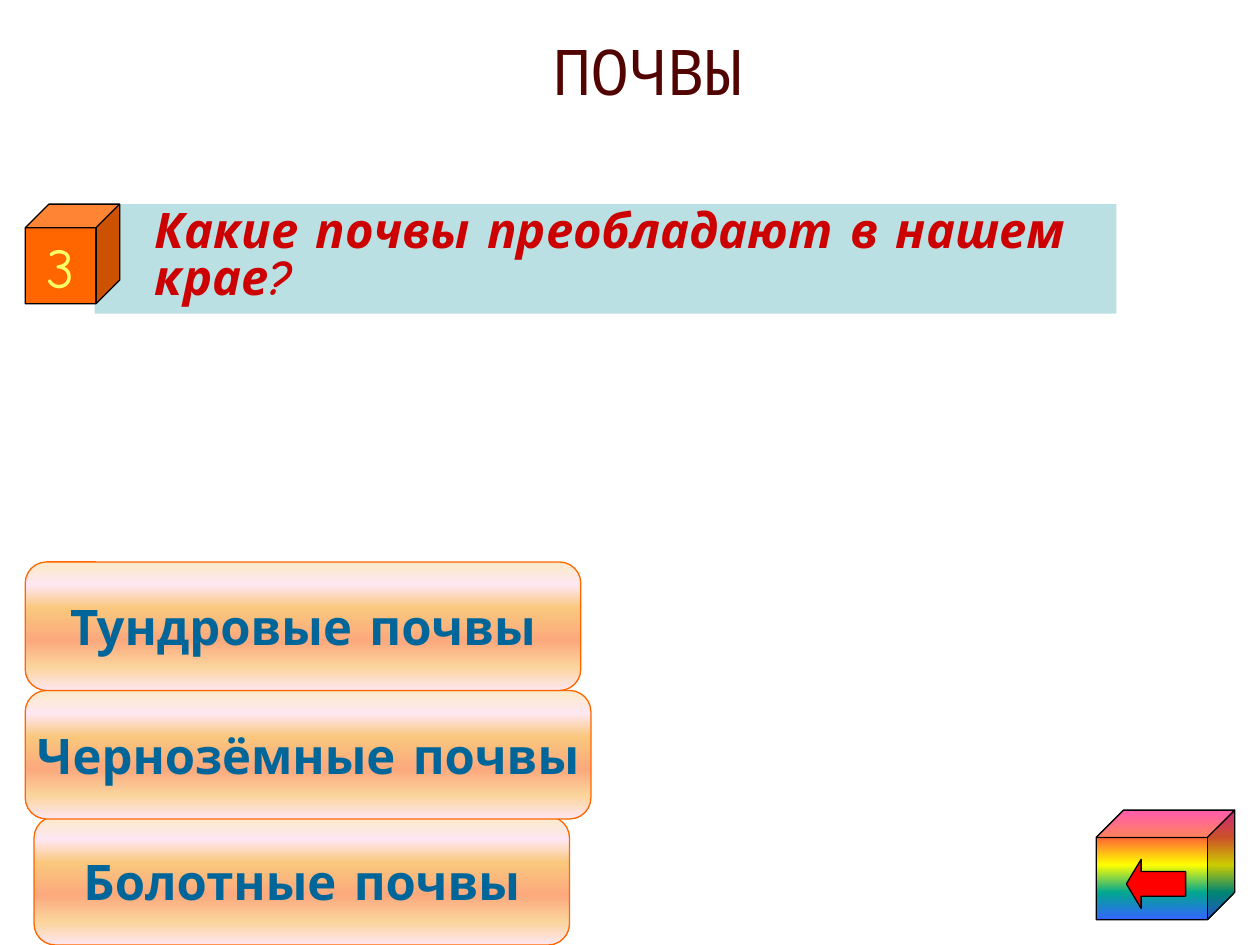
from dataclasses import dataclass
from typing import Any

from lxml import etree
from pptx import Presentation
from pptx.dml.color import RGBColor
from pptx.enum.shapes import MSO_SHAPE
from pptx.enum.text import MSO_ANCHOR, MSO_AUTO_SIZE, PP_ALIGN
from pptx.oxml.ns import qn
from pptx.util import Inches, Pt

ROUND, CUBE, ARROW = MSO_SHAPE.ROUNDED_RECTANGLE, MSO_SHAPE.CUBE, MSO_SHAPE.LEFT_ARROW
TOP, MIDDLE = MSO_ANCHOR.TOP, MSO_ANCHOR.MIDDLE
LEFT, CENTER = PP_ALIGN.LEFT, PP_ALIGN.CENTER
FIXED = MSO_AUTO_SIZE.NONE

WIDE, HIGH = Inches(10), Inches(7.5)
COLS, ROWS = 100, 75
HAND, MONO = "Comic Neue", "Noto Sans Mono"
PEACH = [(0, "FBEAC7"), (18, "FEE7F2"), (36, "FAC77D"),
         (61, "FBA97D"), (82, "FBD49C"), (100, "FEE7F2")]
RAINBOW = [(0, "FF3399"), (25, "FF6633"), (50, "FFFF00"),
           (75, "01A78F"), (100, "3366FF")]


@dataclass
class Box:
    col: float
    row: float
    cols: float
    rows: float

    def place(self) -> tuple[int, int, int, int]:
        return (int(WIDE * self.col / COLS), int(HIGH * self.row / ROWS),
                int(WIDE * self.cols / COLS), int(HIGH * self.rows / ROWS))


@dataclass
class Answer:
    text: str
    box: Box


ANSWERS = [
    Answer("Болотные почвы", Box(2.7, 64.8, 42.5, 10.2)),
    Answer("Чернозёмные почвы", Box(2, 54.8, 44.9, 10.2)),
    Answer("Тундровые почвы", Box(2, 44.6, 44.1, 10.2)),
]


def color(code: str) -> RGBColor:
    return RGBColor.from_string(code)


def blend(shape: Any, stops: list[tuple[int, str]]) -> None:
    shape.fill.gradient()
    shape.fill.gradient_angle = 270
    items = shape._element.spPr.find(qn("a:gradFill")).find(qn("a:gsLst"))
    for old in list(items):
        items.remove(old)
    for share, code in stops:
        stop = etree.SubElement(items, qn("a:gs"), pos=str(share * 1000))
        etree.SubElement(stop, qn("a:srgbClr"), val=code)


def draw(home: Any, kind: Any, box: Box, fill: Any, line: str) -> Any:
    shape = home.shapes.add_shape(kind, *box.place())
    shape.shadow.inherit = False
    if isinstance(fill, str):
        shape.fill.solid()
        shape.fill.fore_color.rgb = color(fill)
    else:
        blend(shape, fill)
    shape.line.color.rgb = color(line)
    shape.line.width = Pt(0.75)
    return shape


def write(shape: Any, text: str, size: int, code: str, face: str = HAND,
          bold: bool = False, italic: bool = False, align: Any = CENTER,
          anchor: Any = MIDDLE, wrap: bool = False) -> Any:
    frame = shape.text_frame
    frame.text = text
    frame.auto_size = FIXED
    frame.word_wrap = wrap
    frame.vertical_anchor = anchor
    line = frame.paragraphs[0]
    line.alignment = align
    for run in line.runs:
        font = run.font
        font.name, font.size = face, Pt(size)
        font.bold, font.italic = bold, italic
        font.color.rgb = color(code)
    return line


def move(shape: Any, box: Box) -> None:
    shape.left, shape.top, shape.width, shape.height = box.place()


def ask(body: Any, text: str) -> None:
    move(body, Box(7.5, 16.2, 81.1, 8.7))
    body.fill.solid()
    body.fill.fore_color.rgb = color("BBE0E3")
    line = write(body, "\t" + text, 28, "CC0000", bold=True, italic=True,
                 align=LEFT, anchor=TOP, wrap=True)
    line.line_spacing = 0.8
    line.space_before = Pt(0)
    props = line._p.get_or_add_pPr()
    props.set("marL", str(Inches(0.38)))
    props.set("indent", str(-Inches(0.38)))
    etree.SubElement(props, qn("a:buNone"))


def main() -> None:
    deck = Presentation()
    deck.slide_width, deck.slide_height = WIDE, HIGH
    slide = deck.slides.add_slide(deck.slide_layouts[1])

    title = slide.shapes.title
    move(title, Box(9.8, 2.1, 83.2, 14.2))
    write(title, "ПОЧВЫ", 36, "520402", MONO, anchor=TOP)
    ask(slide.placeholders[1], "Какие почвы преобладают в нашем крае?")

    for answer in ANSWERS:
        card = draw(slide, ROUND, answer.box, PEACH, "FF6600")
        write(card, answer.text, 28, "006699", bold=True)

    back = slide.shapes.add_group_shape()
    draw(back, CUBE, Box(87, 64.3, 11, 8.7), RAINBOW, "000000")
    arrow = draw(back, ARROW, Box(89.4, 68.2, 4.7, 3.9), "FF0000", "000000")
    arrow.adjustments[1] = 0.3

    badge = draw(slide, CUBE, Box(2, 16.2, 7.5, 7.9), "FF6600", "000000")
    write(badge, "3", 32, "FFFF66")
    deck.save("out.pptx")


if __name__ == "__main__":
    main()
